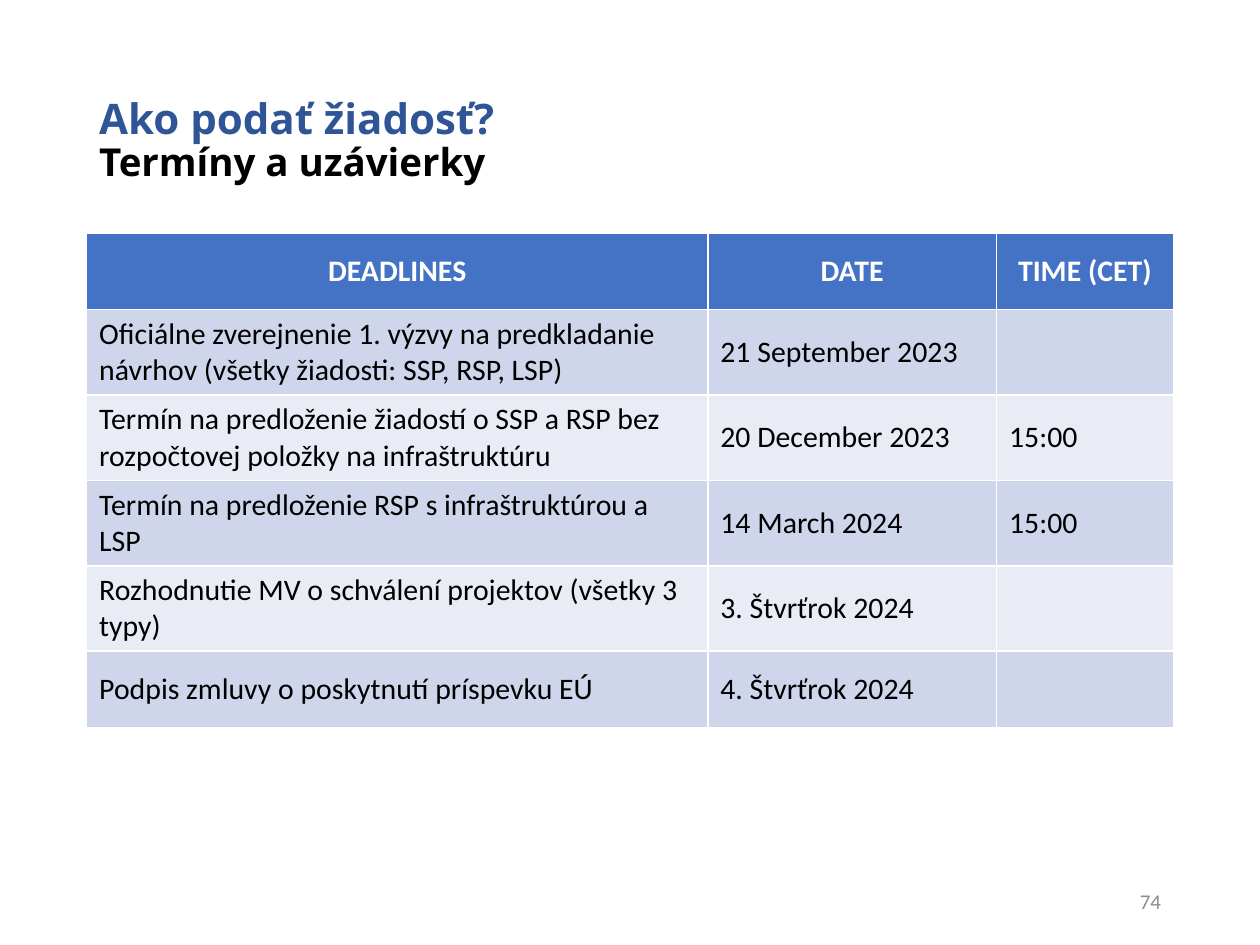
import pptx
import pptx.dml.color
import pptx.enum.text
import pptx.util

Pt = pptx.util.Pt
ALIGN = pptx.enum.text.PP_ALIGN
MIDDLE = pptx.enum.text.MSO_ANCHOR.MIDDLE


def rgb(value):
    return pptx.dml.color.RGBColor.from_string(value)


def write(para, text, size=17, font="Calibri", color="000000", bold=False, align=ALIGN.LEFT):
    para.alignment = align
    span = para.add_run()
    span.text = text
    span.font.size = Pt(size)
    span.font.name = font
    span.font.bold = bold
    span.font.color.rgb = rgb(color)


deck = pptx.Presentation()
deck.slide_width, deck.slide_height = Pt(720), Pt(540)
page = deck.slides.add_slide(deck.slide_layouts[5])

# Title
title = page.shapes.title
title.left, title.top, title.width, title.height = Pt(49.5), Pt(28.75), Pt(621), Pt(104.4)
title.text_frame.auto_size = pptx.enum.text.MSO_AUTO_SIZE.NONE
title.text_frame.vertical_anchor = MIDDLE
para = title.text_frame.paragraphs[0]
para.line_spacing = 0.9
write(para, "Ako podať žiadosť?", size=24, font="Open Sans", color="2F5597", bold=True)
para.add_line_break()
write(para, "Termíny a uzávierky", size=22, font="Open Sans", bold=True)

# Deadlines table
rows = [
    ("DEADLINES", "DATE", "TIME (CET)"),
    ("Oficiálne zverejnenie 1. výzvy na predkladanie návrhov (všetky žiadosti: SSP, RSP, LSP)",
     "21 September 2023", ""),
    ("Termín na predloženie žiadostí o SSP a RSP bez rozpočtovej položky na infraštruktúru",
     "20 December 2023", "15:00"),
    ("Termín na predloženie RSP s infraštruktúrou a LSP", "14 March 2024", "15:00"),
    ("Rozhodnutie MV o schválení projektov (všetky 3 typy)", "3. Štvrťrok 2024", ""),
    ("Podpis zmluvy o poskytnutí príspevku EÚ", "4. Štvrťrok 2024", ""),
]
widths = [355, 165, 101]
row_height = 43.8
table = page.shapes.add_table(len(rows), len(widths), Pt(49.5), Pt(133.2),
                              Pt(sum(widths)), Pt(row_height * len(rows))).table
for column, width in zip(table.columns, widths):
    column.width = Pt(width)

for r, row in enumerate(rows):
    table.rows[r].height = Pt(row_height)
    for c, text in enumerate(row):
        cell = table.cell(r, c)
        cell.vertical_anchor = MIDDLE
        cell.fill.solid()
        para = cell.text_frame.paragraphs[0]
        if r == 0:
            cell.fill.fore_color.rgb = rgb("4472C4")
            write(para, text, color="FFFFFF", bold=True, align=ALIGN.CENTER)
        else:
            cell.fill.fore_color.rgb = rgb("CFD5EA" if r % 2 else "E9EBF5")
            if text:
                write(para, text)
            else:
                para.font.size = Pt(17)

# Page number
box = page.shapes.add_textbox(Pt(508.5), Pt(500.5), Pt(162), Pt(28.75))
box.text_frame.word_wrap = True
box.text_frame.vertical_anchor = MIDDLE
write(box.text_frame.paragraphs[0], "74", size=12, color="8C8C8C", align=ALIGN.RIGHT)

deck.save("out.pptx")
